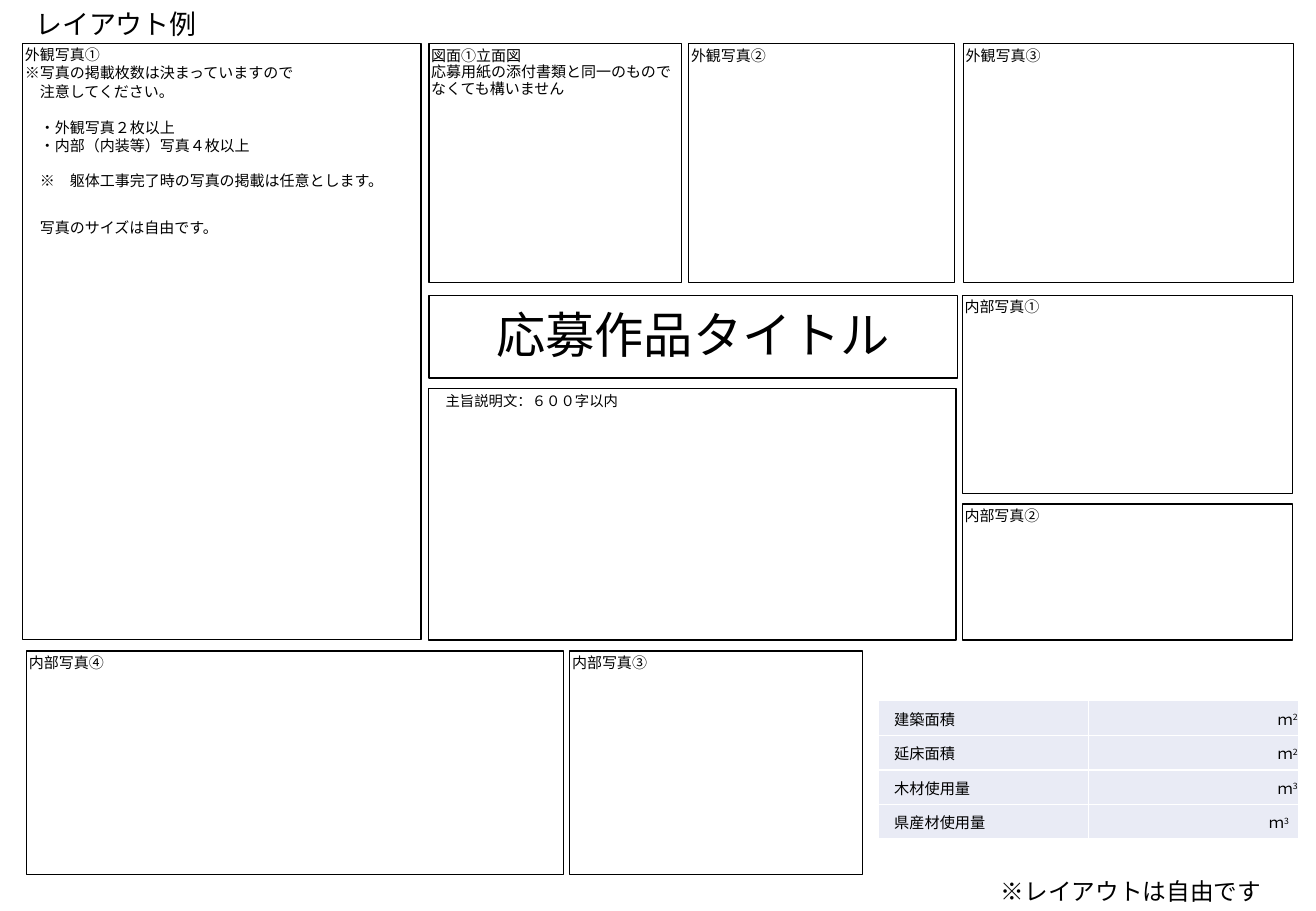
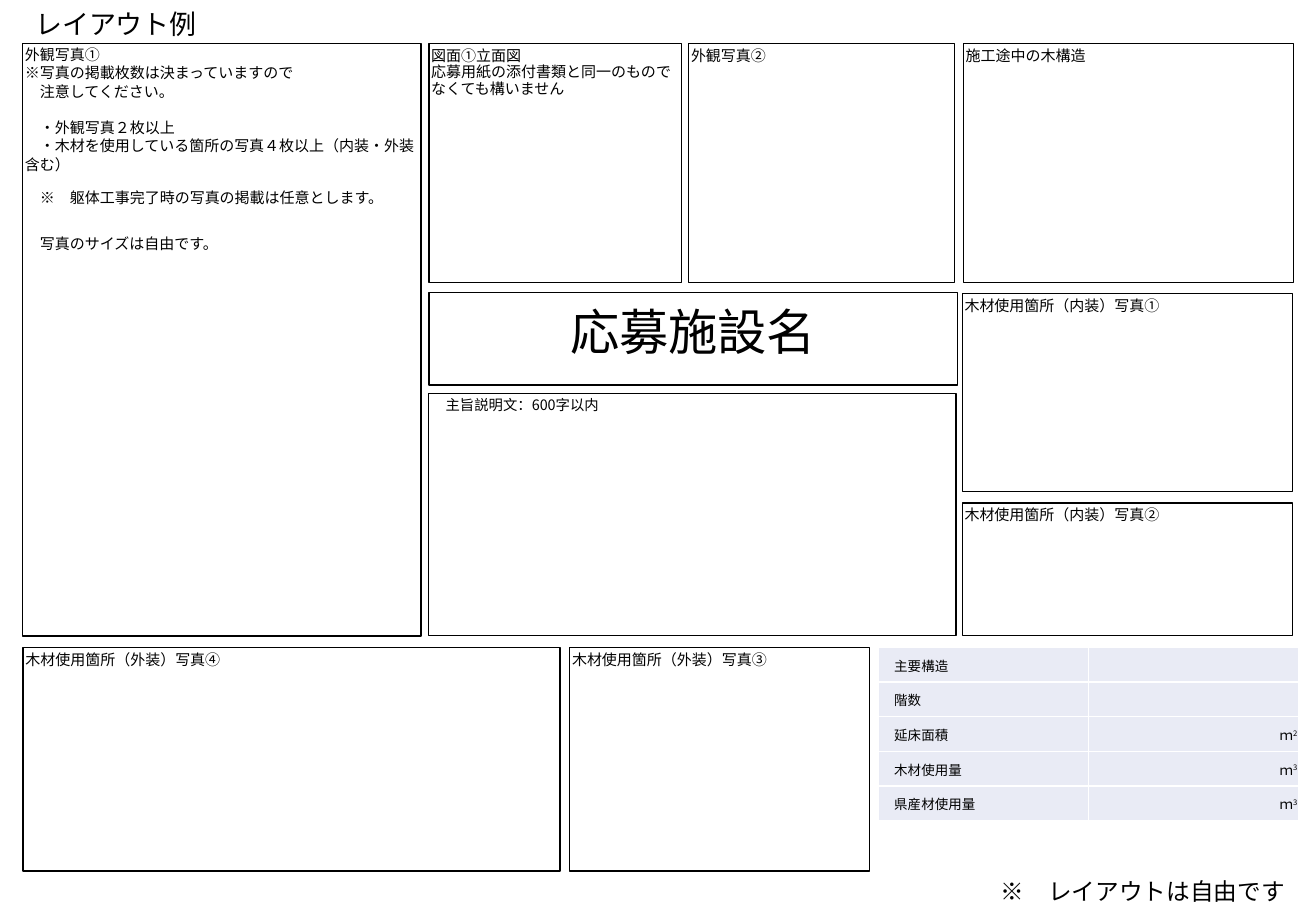
from lxml import etree
from pptx import Presentation
from pptx.dml.color import RGBColor
from pptx.enum import shapes, text
from pptx.oxml.ns import qn
from pptx.util import Pt

SMALL_LINE, NOTE_LINE = 10.8, 9.8
LEFT, MIDDLE, RIGHT = 13.4, 254.2, 570.3
TOP, TOP_HEIGHT = 25.9, 141.8
RIGHT_WIDTH, LOWER_HEIGHT = 195.8, 132.5


def color(value):
    return RGBColor.from_string(value)


class Deck:
    ink, paper, cell_fill = "000000", "FFFFFF", "E9EBF5"
    face = "Noto Sans CJK JP"

    def __init__(self):
        self.deck = Presentation()
        self.deck.slide_width, self.deck.slide_height = Pt(780), Pt(540)
        self.page = None

    def add_page(self, heading):
        self.page = self.deck.slides.add_slide(self.deck.slide_layouts[5])
        title = self.page.shapes.title
        title.left, title.top, title.width, title.height = map(Pt, (13.7, 0, 195.8, 26.6))
        self.frame(title.text_frame, (7.2, 3.6, 7.2, 3.6))
        self.line(title.text_frame.paragraphs[0], heading, 16, 20)

    def frame(self, frame, insets):
        frame.word_wrap = True
        frame.auto_size = text.MSO_AUTO_SIZE.NONE
        frame.vertical_anchor = text.MSO_ANCHOR.TOP
        frame.margin_left, frame.margin_top, frame.margin_right, frame.margin_bottom = map(Pt, insets)

    def span(self, para, words, size, face=None, raised=False):
        span = para.add_run()
        span.text = words
        span.font.size = Pt(size)
        span.font.name = face or self.face
        span.font.color.rgb = color(self.ink)
        properties = span._r.get_or_add_rPr()
        etree.SubElement(properties, qn("a:ea"), typeface=self.face)
        if raised:
            properties.set("baseline", "30000")

    def line(self, para, words, size, spacing, before=0, align=text.PP_ALIGN.LEFT):
        para.alignment = align
        para.line_spacing, para.space_before = Pt(spacing), Pt(before)
        self.span(para, words, size)

    def box(self, place, lines, size=8.9, insets=(1.4, 1.4, 0, 0), align=text.PP_ALIGN.LEFT):
        box = self.page.shapes.add_shape(shapes.MSO_SHAPE.RECTANGLE, *map(Pt, place))
        box.shadow.inherit = False
        box.fill.solid()
        box.fill.fore_color.rgb = color(self.paper)
        box.line.color.rgb = color(self.ink)
        box.line.width = Pt(0.75)
        self.frame(box.text_frame, insets)
        for index, (words, spacing, before) in enumerate(lines):
            para = box.text_frame.add_paragraph() if index else box.text_frame.paragraphs[0]
            self.line(para, words, size, spacing, before, align)

    def photo(self, place, caption):
        self.box(place, [(caption, SMALL_LINE, 0)])

    def table(self, top, rows, size, label_face):
        row_height, column_width = 20.5, 124.6
        table = self.page.shapes.add_table(
            len(rows), 2, Pt(520.6), Pt(top), Pt(2 * column_width), Pt(row_height * len(rows))).table
        table.first_row = table.horz_banding = False
        for column in table.columns:
            column.width = Pt(column_width)
        for row, (label, power) in zip(table.rows, rows):
            row.height = Pt(row_height)
            for cell, side in zip(row.cells, (9.4, 0.7)):
                cell.fill.solid()
                cell.fill.fore_color.rgb = color(self.cell_fill)
                cell.vertical_anchor = text.MSO_ANCHOR.MIDDLE
                cell.margin_left = cell.margin_right = Pt(side)
                cell.margin_top, cell.margin_bottom = Pt(0.7), Pt(0)
            name, unit = (cell.text_frame.paragraphs[0] for cell in row.cells)
            self.span(name, label, size, label_face)
            unit.alignment = text.PP_ALIGN.RIGHT
            if power:
                self.span(unit, "　ｍ", size)
                self.span(unit, power, size, raised=True)
            else:
                etree.SubElement(unit._p, qn("a:endParaRPr"), sz=str(size * 100))

    def footnote(self, words):
        box = self.page.shapes.add_textbox(Pt(586.1), Pt(515.5), Pt(190), Pt(24.4))
        self.frame(box.text_frame, (7.2, 3.6, 0, 0))
        self.line(box.text_frame.paragraphs[0], words, 14, 17.5)


SHEETS = [
    dict(name="応募作品タイトル", name_band=(175, 49), summary="　主旨説明文：６００字以内　",
         summary_band=(230.4, 149), main_height=353.5, count="　・内部（内装等）写真４枚以上", gap=10.8,
         top_right="外観写真③", inside="内部写真{}", outside="内部写真{}",
         first_band=(175, 117.4), second_band=(298.8, 80.6),
         lower_top=385.9, lower_left=15.8, third_width=173.5,
         table=(415.4, [("建築面積", "2"), ("延床面積", "2"), ("木材使用量", "3"), ("県産材使用量", "3　")], 9, None),
         footnote="※レイアウトは自由です"),
    dict(name="応募施設名", name_band=(173.5, 54.7), summary="　主旨説明文：600字以内　",
         summary_band=(233.3, 143.3), main_height=351.4,
         count="　・木材を使用している箇所の写真４枚以上（内装・外装含む）", gap=9.8,
         top_right="施工途中の木構造", inside="木材使用箇所（内装）写真{}", outside="木材使用箇所（外装）写真{}",
         first_band=(174.2, 117.4), second_band=(298.1, 78.5),
         lower_top=383.8, lower_left=13.7, third_width=177.8,
         table=(383.8, [("主要構造", ""), ("階数", ""), ("延床面積", "2"), ("木材使用量", "3"), ("県産材使用量", "3")],
                8, "Calibri"),
         footnote="※　レイアウトは自由です"),
]


def band(left, width, vertical):
    top, height = vertical
    return left, top, width, height


def build(deck, sheet):
    deck.add_page("レイアウト例")
    top_row = (TOP, TOP_HEIGHT)
    lower_row = (sheet["lower_top"], LOWER_HEIGHT)
    deck.box((LEFT, 25.6, 236.2, sheet["main_height"]), [
        ("外観写真①", SMALL_LINE, 0),
        ("※写真の掲載枚数は決まっていますので", SMALL_LINE, 0),
        ("　注意してください。", SMALL_LINE, 0),
        ("　・外観写真２枚以上", SMALL_LINE, SMALL_LINE),
        (sheet["count"], SMALL_LINE, 0),
        ("　※　躯体工事完了時の写真の掲載は任意とします。", NOTE_LINE, sheet["gap"]),
        ("　写真のサイズは自由です。", NOTE_LINE, 17.9),
    ])
    deck.box(band(MIDDLE, 149.8, top_row), [
        ("図面①立面図", SMALL_LINE, 0),
        ("応募用紙の添付書類と同一のものでなくても構いません", NOTE_LINE, 0),
    ])
    for place, caption in (
        (band(408.2, 157.7, top_row), "外観写真②"),
        (band(571, RIGHT_WIDTH, top_row), sheet["top_right"]),
        (band(RIGHT, RIGHT_WIDTH, sheet["first_band"]), sheet["inside"].format("①")),
        (band(RIGHT, RIGHT_WIDTH, sheet["second_band"]), sheet["inside"].format("②")),
        (band(337.7, sheet["third_width"], lower_row), sheet["outside"].format("③")),
        (band(sheet["lower_left"], 318.2, lower_row), sheet["outside"].format("④")),
    ):
        deck.photo(place, caption)
    deck.box(band(MIDDLE, 313.2, sheet["name_band"]), [(sheet["name"], 37.3, 0)],
             29.2, (4.3, 2.9, 4.3, 0), text.PP_ALIGN.CENTER)
    deck.box(band(MIDDLE, 312.5, sheet["summary_band"]), [(sheet["summary"], 10.6, 0)], 8.5)
    deck.table(*sheet["table"])
    deck.footnote(sheet["footnote"])


def main():
    deck = Deck()
    for sheet in SHEETS:
        build(deck, sheet)
    deck.deck.save("out.pptx")


if __name__ == "__main__":
    main()
